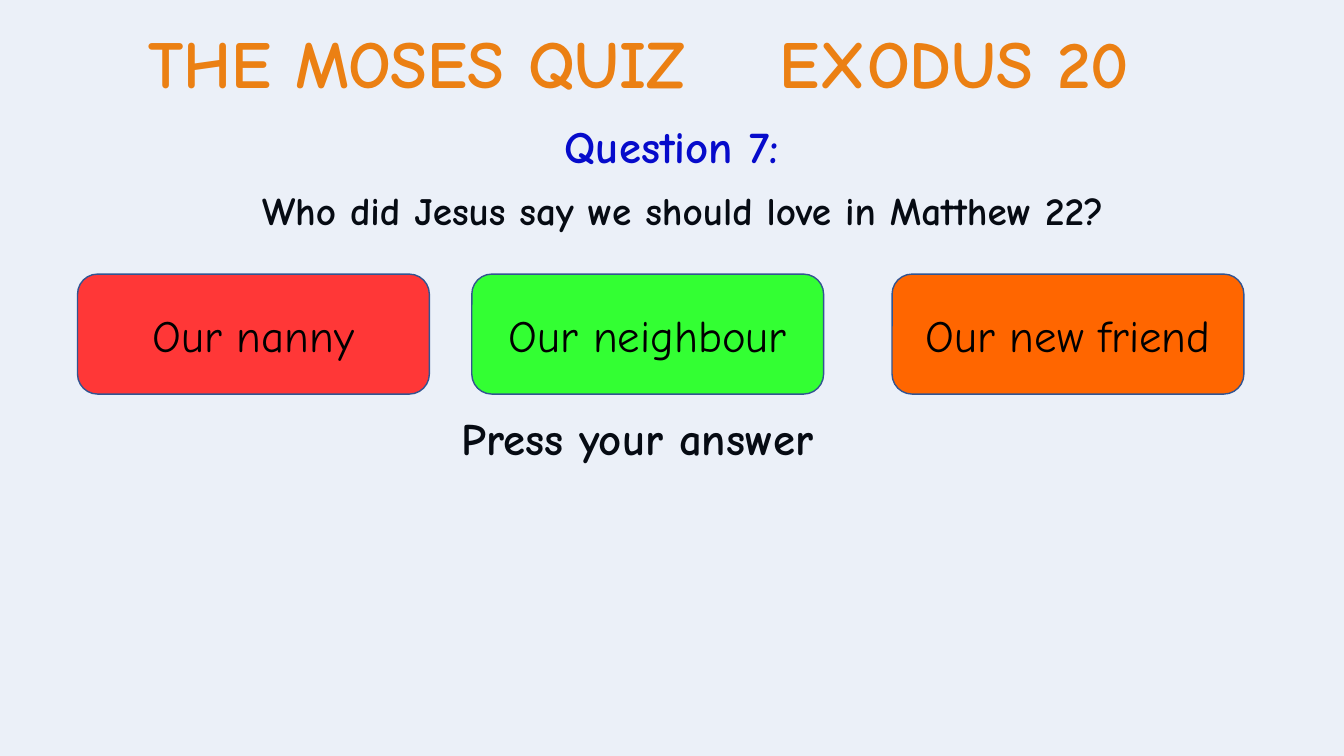
from lxml import etree
from pptx import Presentation
from pptx.dml.color import RGBColor
from pptx.enum.shapes import MSO_SHAPE
from pptx.enum.text import MSO_ANCHOR, MSO_AUTO_SIZE, PP_ALIGN
from pptx.oxml.ns import qn
from pptx.util import Pt

LEFT, CENTER = PP_ALIGN.LEFT, PP_ALIGN.CENTER
TOP, MIDDLE = MSO_ANCHOR.TOP, MSO_ANCHOR.MIDDLE
NO_AUTOFIT = MSO_AUTO_SIZE.NONE
RECTANGLE, ROUNDED = MSO_SHAPE.RECTANGLE, MSO_SHAPE.ROUNDED_RECTANGLE
TITLE_ONLY = 5
WIDTH, HEIGHT = 960, 540

COLORS = {
    "title": "FF8200",
    "question": "0000CC",
    "text": "000000",
    "tint": "4472C4",
    "outline": "325491",
    "red": "FF3737",
    "green": "33FF33",
    "orange": "FF6600",
}


class QuizSlide:
    font = "Comic Neue"

    def __init__(self, presentation):
        layout = presentation.slide_layouts[TITLE_ONLY]
        self.slide = presentation.slides.add_slide(layout)

    def color(self, name):
        return RGBColor.from_string(COLORS[name])

    def add_words(self, shape, text, size, color="text", bold=True, align=CENTER, anchor=TOP):
        frame = shape.text_frame
        frame.word_wrap = True
        frame.auto_size = NO_AUTOFIT
        frame.vertical_anchor = anchor
        paragraph = frame.paragraphs[0]
        paragraph.alignment = align
        run = paragraph.add_run()
        run.text = text
        run.font.name = self.font
        run.font.size = Pt(size)
        run.font.bold = bold
        run.font.color.rgb = self.color(color)
        return paragraph

    def title(self, text, left, top, width, height, tab):
        shape = self.slide.shapes.title
        shape.left, shape.top = Pt(left), Pt(top)
        shape.width, shape.height = Pt(width), Pt(height)
        shape.text_frame.margin_left = 0
        paragraph = self.add_words(shape, text, 48, "title", align=LEFT, anchor=MIDDLE)
        properties = paragraph._p.get_or_add_pPr()
        tabs = etree.SubElement(properties, qn("a:tabLst"))
        etree.SubElement(tabs, qn("a:tab"), pos=str(Pt(tab)), algn="l")

    def text(self, text, left, top, width, height, size,
             color="text", align=CENTER, spacing=None, before=0):
        box = self.slide.shapes.add_textbox(Pt(left), Pt(top), Pt(width), Pt(height))
        paragraph = self.add_words(box, text, size, color, align=align)
        paragraph.line_spacing = spacing
        paragraph.space_before = Pt(before)

    def panel(self, kind, left, top, width, height, fill):
        shape = self.slide.shapes.add_shape(kind, Pt(left), Pt(top), Pt(width), Pt(height))
        shape.shadow.inherit = False
        shape.fill.solid()
        shape.fill.fore_color.rgb = self.color(fill)
        return shape

    def tint(self, percent):
        shape = self.panel(RECTANGLE, 0, 0, WIDTH, HEIGHT, "tint")
        shape.line.fill.background()
        fill = shape._element.spPr.find(qn("a:solidFill"))
        etree.SubElement(fill[0], qn("a:alpha"), val=str(percent * 1000))

    def answer(self, text, left, fill):
        shape = self.panel(ROUNDED, left, 195.8, 251.3, 85.7, fill)
        shape.line.color.rgb = self.color("outline")
        shape.line.width = Pt(1)
        self.add_words(shape, text, 32, bold=False, anchor=MIDDLE)


def main():
    presentation = Presentation()
    presentation.slide_width, presentation.slide_height = Pt(WIDTH), Pt(HEIGHT)
    quiz = QuizSlide(presentation)
    quiz.title("THE MOSES QUIZ\tEXODUS 20", 106, 11, 800, 65.5, tab=451)
    quiz.text("Who did Jesus say we should love in Matthew 22?",
              71.3, 127.4, 833, 85.7, 28, spacing=Pt(36), before=10)
    quiz.text("Press your answer", 322.6, 294.5, 484.6, 51.8, 32,
              align=LEFT, spacing=0.9, before=7.5)
    quiz.text("Question 7:", 321.1, 81.4, 317.5, 46, 32, "question")
    quiz.tint(10)
    answers = [
        ("Our nanny", 55.4, "red"),
        ("Our neighbour", 337, "green"),
        ("Our new friend", 637.2, "orange"),
    ]
    for text, left, fill in answers:
        quiz.answer(text, left, fill)
    presentation.save("out.pptx")


if __name__ == "__main__":
    main()
